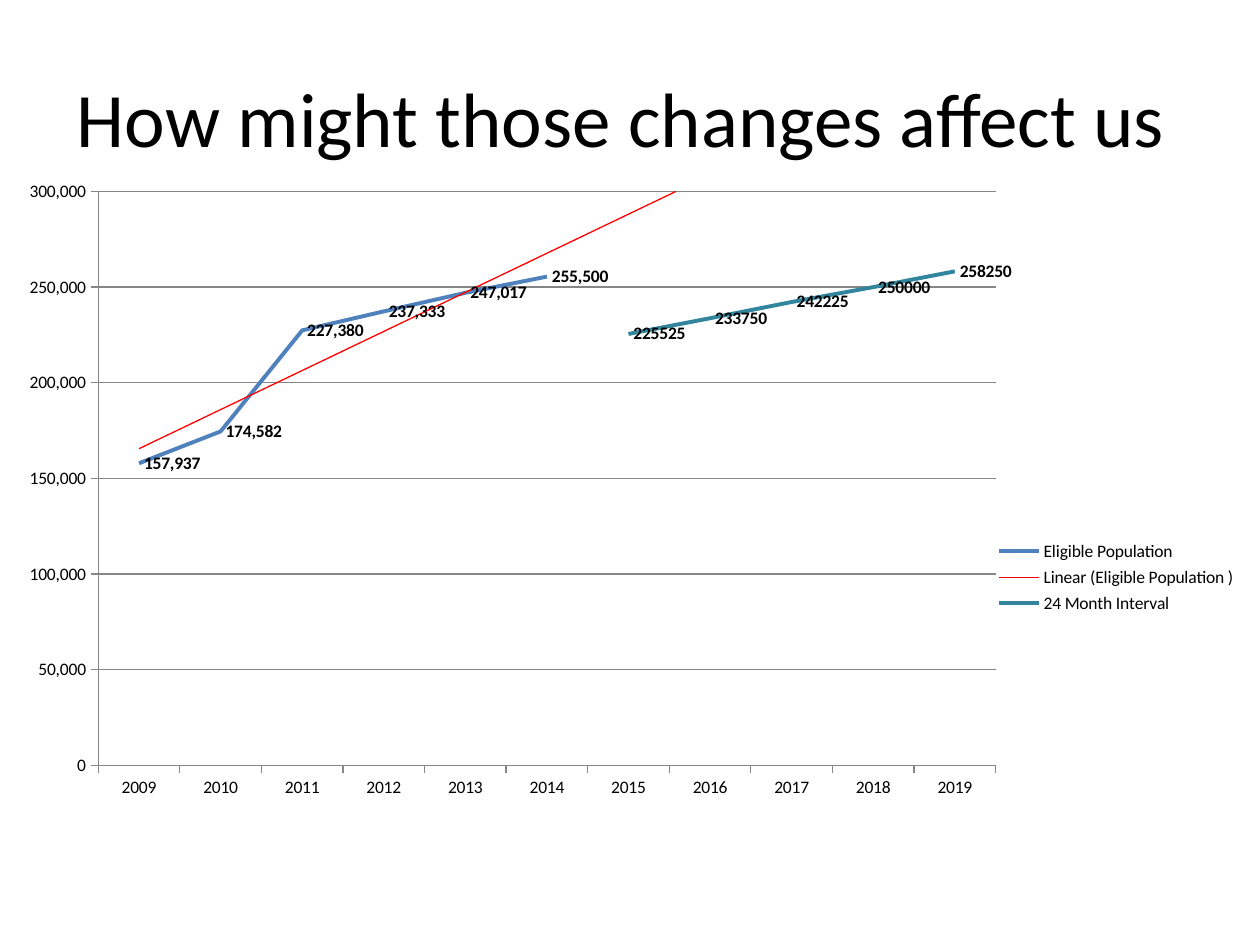
from dataclasses import dataclass

from pptx import Presentation
from pptx.chart.data import CategoryChartData
from pptx.dml.color import RGBColor
from pptx.enum.chart import XL_CHART_TYPE, XL_LABEL_POSITION, XL_LEGEND_POSITION, XL_TICK_MARK
from pptx.enum.text import MSO_ANCHOR, PP_ALIGN
from pptx.oxml import parse_xml
from pptx.oxml.ns import nsdecls, qn
from pptx.util import Pt


@dataclass(frozen=True)
class Theme:
    font: str = "Calibri"
    title_size: int = 44
    chart_size: int = 10
    text: str = "000000"
    axis: str = "868686"
    population: str = "4F81BD"
    interval: str = "31859C"
    trend: str = "FF0000"
    thin_line: float = 0.75
    series_line: float = 2.25


THEME = Theme()
YEARS = [str(year) for year in range(2009, 2020)]
POPULATION = [157937, 174582, 227380, 237333, 247017, 255500]
INTERVAL = [225525, 233750, 242225, 250000, 258250]


def style_font(font, size, bold=False):
    font.name = THEME.font
    font.size = Pt(size)
    font.bold = bold
    font.color.rgb = RGBColor.from_string(THEME.text)


def style_line(line, color, width):
    line.color.rgb = RGBColor.from_string(color)
    line.width = Pt(width)


def add_title(slide, text):
    title = slide.shapes.title
    title.left, title.top, title.width, title.height = Pt(36), Pt(21.6), Pt(648), Pt(90)
    frame = title.text_frame
    frame.text = text
    frame.word_wrap = True
    frame.vertical_anchor = MSO_ANCHOR.MIDDLE
    paragraph = frame.paragraphs[0]
    paragraph.alignment = PP_ALIGN.CENTER
    style_font(paragraph.font, THEME.title_size)


def set_layout(element, index, left, top, width, height, inner=False):
    """Place a chart part by fractions of the chart's size."""
    for layout in element.findall(qn("c:layout")):
        element.remove(layout)
    target = '<c:layoutTarget val="inner"/>' if inner else ""
    element.insert(index, parse_xml(
        f'<c:layout {nsdecls("c")}><c:manualLayout>{target}'
        '<c:xMode val="edge"/><c:yMode val="edge"/>'
        f'<c:x val="{left}"/><c:y val="{top}"/><c:w val="{width}"/><c:h val="{height}"/>'
        '</c:manualLayout></c:layout>'))


def style_series(series, color, number_format):
    series.smooth = False
    style_line(series.format.line, color, THEME.series_line)
    labels = series.data_labels
    labels.show_value = True
    labels.position = XL_LABEL_POSITION.RIGHT
    labels.number_format = number_format
    labels.number_format_is_linked = False
    style_font(labels.font, THEME.chart_size, bold=True)


def add_linear_trend(series, periods_forward):
    trend = parse_xml(
        f'<c:trendline {nsdecls("c", "a")}><c:spPr><a:ln w="{Pt(THEME.thin_line)}">'
        f'<a:solidFill><a:srgbClr val="{THEME.trend}"/></a:solidFill></a:ln></c:spPr>'
        f'<c:trendlineType val="linear"/><c:forward val="{periods_forward}"/>'
        '<c:dispRSqr val="0"/><c:dispEq val="0"/></c:trendline>')
    series._element.find(qn("c:cat")).addprevious(trend)


def style_axes(chart):
    for axis in (chart.category_axis, chart.value_axis):
        axis.major_tick_mark = XL_TICK_MARK.OUTSIDE
        axis.minor_tick_mark = XL_TICK_MARK.NONE
        style_line(axis.format.line, THEME.axis, THEME.thin_line)
        style_font(axis.tick_labels.font, THEME.chart_size)
    values = chart.value_axis
    values.minimum_scale, values.maximum_scale, values.major_unit = 0, 300000, 50000
    values.tick_labels.number_format = "#,##0"
    values.tick_labels.number_format_is_linked = False
    values.has_major_gridlines = True
    style_line(values.major_gridlines.format.line, THEME.axis, THEME.thin_line)


def add_legend(chart):
    chart.has_legend = True
    legend = chart.legend
    legend.position = XL_LEGEND_POSITION.RIGHT
    legend.include_in_layout = False
    style_font(legend.font, THEME.chart_size)
    set_layout(legend._element, 1, 0.8, 0.59, 0.2, 0.12)


def add_population_chart(slide):
    data = CategoryChartData()
    data.categories = YEARS
    data.add_series("Eligible Population ", POPULATION)
    data.add_series("24 Month Interval", [None] * len(POPULATION) + INTERVAL)
    chart = slide.shapes.add_chart(
        XL_CHART_TYPE.LINE, Pt(11.5), Pt(68.4), Pt(697.7), Pt(402.5), data).chart
    chart.has_title = False
    style_font(chart.font, THEME.chart_size)
    plot = chart.plots[0]
    plot.vary_by_categories = False
    population, interval = plot.series
    style_series(population, THEME.population, "#,##0")
    style_series(interval, THEME.interval, "General")
    add_linear_trend(population, len(INTERVAL))
    style_axes(chart)
    add_legend(chart)
    plot_area = chart._chartSpace.find(".//" + qn("c:plotArea"))
    set_layout(plot_area, 0, 0.064, 0.102, 0.735, 0.815, inner=True)


def main():
    presentation = Presentation()
    presentation.slide_width, presentation.slide_height = Pt(720), Pt(540)
    slide = presentation.slides.add_slide(presentation.slide_layouts[5])
    add_title(slide, "How might those changes affect us ")
    add_population_chart(slide)
    presentation.save("out.pptx")


if __name__ == "__main__":
    main()
